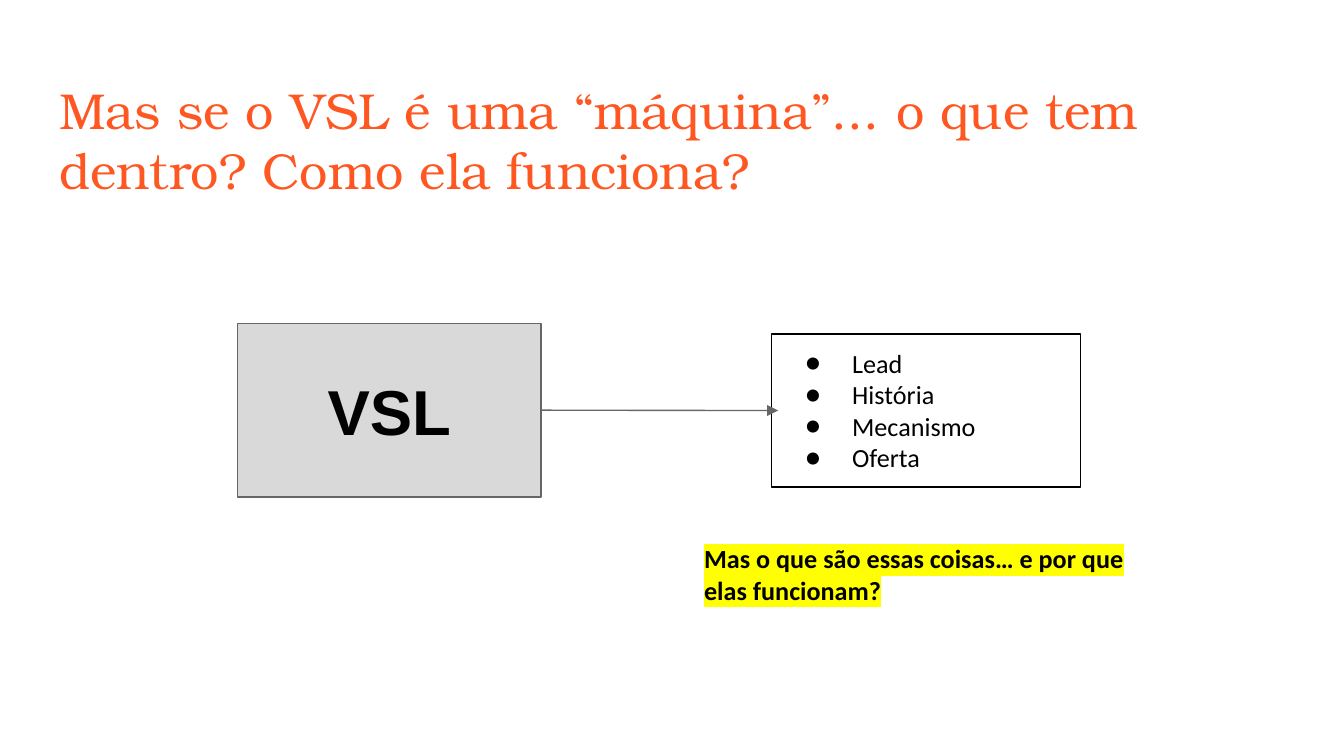
"""Build a slide that opens up the VSL "machine" into its four parts."""
from lxml import etree
from pptx import Presentation
from pptx import util as u
from pptx.dml.color import RGBColor
from pptx.enum import shapes, text
from pptx.oxml import ns

COLS, ROWS = 100, 56.25
CELL = u.Inches(0.1)

TITLE = "Mas se o VSL é uma “máquina”... o que tem dentro? Como ela funciona?"
MACHINE = "VSL"
PARTS = ["Lead", "História", "Mecanismo", "Oferta"]
QUESTION = "Mas o que são essas coisas… e por que elas funcionam?"

GRID = {
    "title": (3.4, 4.87, 93.2, 6.3),
    "machine": (17.67, 24.07, 22.6, 12.9),
    "parts": (57.4, 24.85, 23, 11.4),
    "question": (51.4, 39.37, 34.6, 6.7),
}
ARROW_OVERLAP = 0.5

THEME = {
    "title": {"font": "TeX Gyre Bonum", "size": 27, "color": "FF5722"},
    "machine": {"font": "Arial", "size": 34, "color": "000000", "bold": True},
    "parts": {"font": "Calibri", "size": 14, "color": "000000"},
    "question": {"font": "Calibri", "size": 14, "color": "000000", "bold": True},
    "fill": "D9D9D9", "line": "666666", "frame": "000000",
    "highlight": "FFFF00", "line_width": 0.75,
}


def cells(*values):
    return [round(v * CELL) for v in values]


def add_xml(parent, tag, **attrs):
    return etree.SubElement(parent, ns.qn(tag), attrs)


def place(sp, name):
    sp.left, sp.top, sp.width, sp.height = cells(*GRID[name])


def outline(line, color):
    line.color.rgb = RGBColor.from_string(THEME[color])
    line.width = u.Pt(THEME["line_width"])


def write(sp, name, lines, align=text.PP_ALIGN.LEFT, anchor=text.MSO_ANCHOR.TOP,
          bullets=False):
    style, tf = THEME[name], sp.text_frame
    tf.word_wrap = True
    tf.auto_size = text.MSO_AUTO_SIZE.NONE
    tf.vertical_anchor = anchor
    tf.margin_left = tf.margin_right = tf.margin_top = tf.margin_bottom = CELL
    for i, line in enumerate(lines):
        p = tf.add_paragraph() if i else tf.paragraphs[0]
        p.alignment = align
        p.space_before = u.Pt(0)
        if bullets:
            add_bullet(p, style["color"])
        r = p.add_run()
        r.text = line
        r.font.name, r.font.size = style["font"], u.Pt(style["size"])
        r.font.bold = style.get("bold", False)
        r.font.color.rgb = RGBColor.from_string(style["color"])


def add_bullet(p, color):
    pPr = p._p.get_or_add_pPr()
    pPr.set("marL", str(u.Inches(0.5)))
    pPr.set("indent", str(u.Inches(-0.35)))
    add_xml(add_xml(pPr, "a:buClr"), "a:srgbClr", val=color)
    add_xml(pPr, "a:buFont", typeface=THEME["parts"]["font"])
    add_xml(pPr, "a:buChar", char="●")


def highlight(r, color):
    rPr = r._r.get_or_add_rPr()
    mark = add_xml(rPr, "a:highlight")
    add_xml(mark, "a:srgbClr", val=color)
    rPr.find(ns.qn("a:latin")).addprevious(mark)


def add_arrow(s):
    left, top, width, height = GRID["machine"]
    target_left, target_top, _, target_height = GRID["parts"]
    ends = cells(left + width, top + height / 2,
                 target_left + ARROW_OVERLAP, target_top + target_height / 2)
    arrow = s.shapes.add_connector(shapes.MSO_CONNECTOR.STRAIGHT, *ends)
    outline(arrow.line, "line")
    add_xml(arrow.line._get_or_add_ln(), "a:tailEnd", type="triangle")
    add_xml(arrow._element.spPr, "a:effectLst")


def main():
    prs = Presentation()
    prs.slide_width, prs.slide_height = cells(COLS, ROWS)
    s = prs.slides.add_slide(prs.slide_layouts[1])

    title, parts = s.shapes.title, s.placeholders[1]
    place(title, "title")
    write(title, "title", [TITLE])

    add_arrow(s)

    machine = s.shapes.add_shape(shapes.MSO_SHAPE.RECTANGLE, *cells(*GRID["machine"]))
    machine.shadow.inherit = False
    machine.fill.solid()
    machine.fill.fore_color.rgb = RGBColor.from_string(THEME["fill"])
    outline(machine.line, "line")
    write(machine, "machine", [MACHINE], text.PP_ALIGN.CENTER, text.MSO_ANCHOR.MIDDLE)

    place(parts, "parts")
    outline(parts.line, "frame")
    write(parts, "parts", PARTS, bullets=True)

    question = s.shapes.add_textbox(*cells(*GRID["question"]))
    write(question, "question", [QUESTION])
    highlight(question.text_frame.paragraphs[0].runs[0], THEME["highlight"])

    prs.save("out.pptx")


if __name__ == "__main__":
    main()
